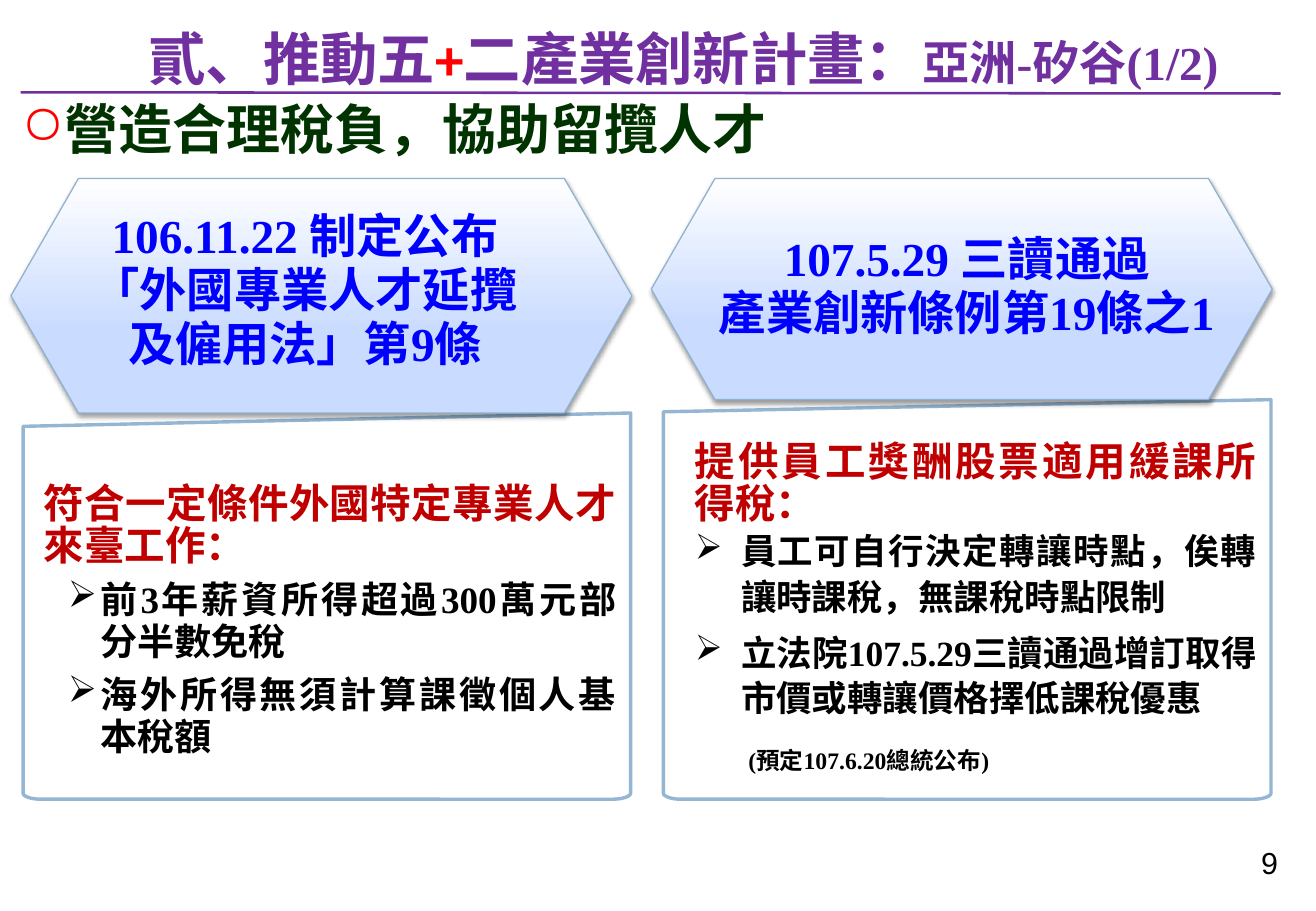
from math import cos, pi, sin

from lxml.etree import SubElement
from pptx import Presentation
from pptx.dml.color import RGBColor
from pptx.enum.shapes import MSO_CONNECTOR, MSO_SHAPE
from pptx.enum.text import MSO_ANCHOR, MSO_AUTO_SIZE, PP_ALIGN
from pptx.oxml.ns import qn
from pptx.util import Pt

PX = 9144
SLIDE = (1083, 750)
SERIF, CJK = "Times New Roman", "Noto Sans CJK TC"
PURPLE, RED, GREEN, BLUE = "7030A0", "FF0000", "003300", "0000FF"
CRIMSON, BLACK = "C00000", "000000"
CENTER, JUSTIFY = PP_ALIGN.CENTER, PP_ALIGN.JUSTIFY

TITLE_BOX = (74, 14, 977, 67)
TITLE = [{"align": CENTER, "runs": [
    ("貳、", 34, PURPLE, SERIF), ("推動五", 34, PURPLE, "Calibri"),
    ("+", 34, RED, "Calibri"), ("二產業創新計畫", 34, PURPLE, "Calibri"),
    ("：", 34, PURPLE, CJK), ("亞洲-矽谷(1/2)", 28, PURPLE, SERIF)]}]
RULE = (17, 76, 1054, 77)
TOPIC_BOX = (-11, 92, 965, 45)
TOPIC = [{"align": JUSTIFY, "leading": 25, "indent": (50, -31), "bullet": "○",
          "bullet_color": RED, "runs": [("營造合理稅負，協助留攬人才", 32, GREEN, SERIF)]}]
PAGE_BOX = (1028, 690, 46, 40)
PAGE = [{"align": PP_ALIGN.LEFT, "runs": [("9", 18, BLACK, "Arial")]}]


def law_line(text, hang):
    """Describe a centred line of a hexagon."""
    return {"align": CENTER, "leading": 32, "indent": (hang, -hang),
            "runs": [(text, 28, BLUE, SERIF)]}


def lead_line(text, after):
    """Describe the red opening line of a card."""
    return {"align": JUSTIFY, "leading": 25, "after": after,
            "runs": [(text, 24, CRIMSON, SERIF)]}


def point(text, size, leading, indent):
    """Describe a bulleted line of a card."""
    return {"align": JUSTIFY, "leading": leading, "after": 6, "indent": indent,
            "bullet": "➢", "runs": [(text, size, BLACK, SERIF)]}


CARDS = [
    {"card": (19, 340, 500, 318), "slant": 11, "hexagon": (9, 147, 511, 193),
     "law_box": (31, 167, 440, 145),
     "law": [law_line(text, 31) for text in
             ("106.11.22 制定公布", "「外國專業人才延攬", "及僱用法」第9條")],
     "detail_box": (26, 394, 491, 237),
     "detail": [lead_line("符合一定條件外國特定專業人才來臺工作：", 6)] + [
         point(text, 22, 25, (47, -27)) for text in
         ("前3年薪資所得超過300萬元部分半數免稅", "海外所得無須計算課徵個人基本稅額")]},
    {"card": (546, 329, 500, 329), "slant": 10, "hexagon": (536, 147, 511, 182),
     "law_box": (577, 186, 437, 100),
     "law": [law_line(text, 40) for text in
             ("107.5.29 三讀通過", "產業創新條例第19條之1")],
     "detail_box": (562, 359, 482, 326),
     "detail": [lead_line("提供員工獎酬股票適用緩課所得稅：", 0)] + [
         point(text, 21, 27, (38, -38)) for text in
         ("員工可自行決定轉讓時點，俟轉讓時課稅，無課稅時點限制",
          "立法院107.5.29三讀通過增訂取得市價或轉讓價格擇低課稅優惠")] + [
         {"align": JUSTIFY, "leading": 27, "indent": (44, 0),
          "runs": [("(預定107.6.20總統公布)", 14, BLACK, SERIF)]}]},
]


def emu(lengths):
    """Scale px lengths to EMU."""
    return [round(length * PX) for length in lengths]


def rgb(value):
    """Turn a hex string into a colour."""
    return RGBColor.from_string(value)


def apply(target, values):
    """Set attributes from a dict."""
    for name, value in values.items():
        setattr(target, name, value)


def node(parent, tag, **attributes):
    """Append a drawing element."""
    return SubElement(parent, qn(tag), {k: str(v) for k, v in attributes.items()})


def write(shape, lines, bold=True, wrap=True):
    """Fill a shape with formatted lines."""
    frame = shape.text_frame
    apply(frame, {"word_wrap": wrap, "auto_size": MSO_AUTO_SIZE.NONE,
                  "vertical_anchor": MSO_ANCHOR.TOP})
    for number, line in enumerate(lines):
        paragraph = frame.add_paragraph() if number else frame.paragraphs[0]
        apply(paragraph, {"alignment": line["align"], "space_before": Pt(0),
                          "space_after": Pt(line.get("after", 0))})
        if "leading" in line:
            paragraph.line_spacing = Pt(line["leading"])
        props = paragraph._p.get_or_add_pPr()
        for key, length in zip(("marL", "indent"), emu(line.get("indent", (0, 0)))):
            props.set(key, str(length))
        if "bullet_color" in line:
            node(node(props, "a:buClr"), "a:srgbClr", val=line["bullet_color"])
        if "bullet" in line:
            node(props, "a:buChar", char=line["bullet"])
        for text, size, color, font in line["runs"]:
            run = paragraph.add_run()
            run.text = text
            apply(run.font, {"size": Pt(size), "bold": bold, "name": font})
            run.font.color.rgb = rgb(color)
            node(run._r.get_or_add_rPr(), "a:ea", typeface=CJK)


def add_text(shapes, box, lines, **options):
    """Place a text box."""
    write(shapes.add_textbox(*emu(box)), lines, **options)


def outline(shape, color, width):
    """Draw the edge of a shape and drop its theme shadow."""
    shape.shadow.inherit = False
    shape.line.color.rgb = rgb(color)
    shape.line.width = Pt(width)


def add_card(shapes, box, slant):
    """Draw a white card with a slanted top and rounded lower corners."""
    left, top, width, height = box
    right, bottom, rx, ry = left + width, top + height, 15, 5
    turns = [step * pi / 16 for step in range(17)]
    arc = [((right - rx if turn <= pi / 2 else left + rx) + rx * cos(turn),
            bottom - ry + ry * sin(turn)) for turn in turns]
    edge = [emu(spot) for spot in [(right, top), *arc, (left, top + slant)]]
    builder = shapes.build_freeform(*edge[0])
    builder.add_line_segments(edge[1:], close=True)
    card = builder.convert_to_shape()
    card.fill.solid()
    card.fill.fore_color.rgb = rgb("FFFFFF")
    outline(card, "94B6D2", 2)


def add_hexagon(shapes, box):
    """Draw a shaded hexagon with a soft shadow."""
    hexagon = shapes.add_shape(MSO_SHAPE.HEXAGON, *emu(box))
    hexagon.adjustments[0] = 0.288
    outline(hexagon, "8FB2CF", 0.75)
    props = hexagon._element.spPr
    gradient = node(props, "a:gradFill", rotWithShape=1)
    props.find(qn("a:ln")).addprevious(gradient)
    stops = node(gradient, "a:gsLst")
    for percent, color in ((0, "C9DBFF"), (35, "C9DBFF"), (100, "FFFFFF")):
        node(node(stops, "a:gs", pos=percent * 1000), "a:srgbClr", val=color)
    node(gradient, "a:lin", ang=270 * 60000, scaled=0)
    shadow = node(props.find(qn("a:effectLst")), "a:outerShdw", blurRad=Pt(3.1),
                  dist=Pt(1.6), dir=90 * 60000, rotWithShape=0)
    node(node(shadow, "a:srgbClr", val=BLACK), "a:alpha", val=38000)


def main():
    """Build the slide."""
    deck = Presentation()
    deck.slide_width, deck.slide_height = emu(SLIDE)
    shapes = deck.slides.add_slide(deck.slide_layouts[5]).shapes
    apply(shapes.title, dict(zip(("left", "top", "width", "height"), emu(TITLE_BOX))))
    write(shapes.title, TITLE)
    rule = shapes.add_connector(MSO_CONNECTOR.STRAIGHT, *emu(RULE))
    rule.line.color.rgb = rgb(PURPLE)
    rule.line.width = Pt(1.5)
    node(rule._element.spPr, "a:effectLst")
    for part in CARDS:
        add_card(shapes, part["card"], part["slant"])
        add_hexagon(shapes, part["hexagon"])
        add_text(shapes, part["law_box"], part["law"])
        add_text(shapes, part["detail_box"], part["detail"])
    add_text(shapes, TOPIC_BOX, TOPIC)
    add_text(shapes, PAGE_BOX, PAGE, bold=False, wrap=False)
    deck.save("out.pptx")


if __name__ == "__main__":
    main()
